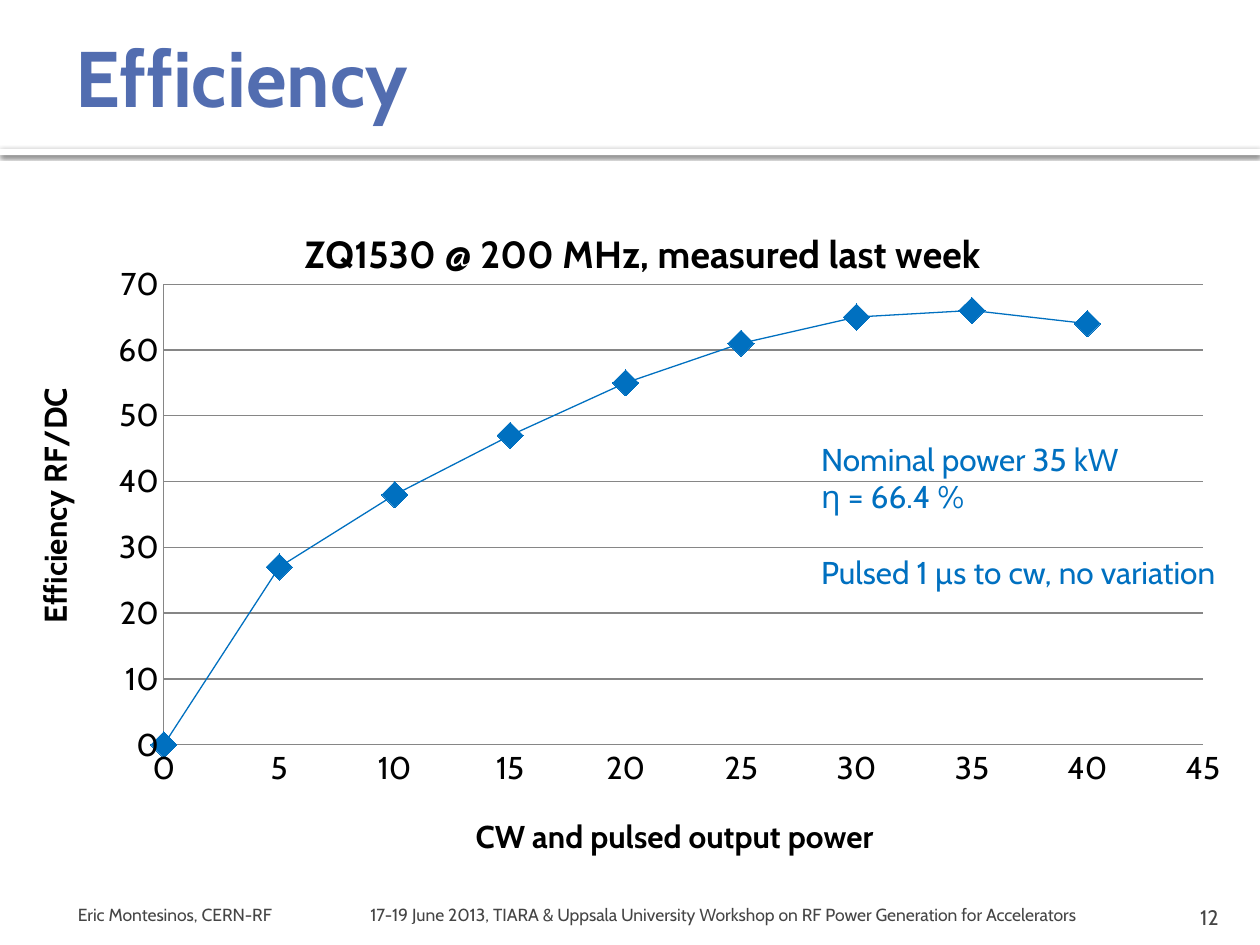
from lxml import etree
from pptx import Presentation
from pptx.chart.data import XyChartData
from pptx.dml.color import RGBColor
from pptx.enum.chart import XL_CHART_TYPE, XL_MARKER_STYLE, XL_TICK_MARK
from pptx.enum.shapes import MSO_SHAPE
from pptx.enum.text import MSO_ANCHOR, MSO_AUTO_SIZE, PP_ALIGN
from pptx.oxml.ns import qn
from pptx.util import Pt

SCATTER = XL_CHART_TYPE.XY_SCATTER_LINES
DIAMOND = XL_MARKER_STYLE.DIAMOND
NO_TICK = XL_TICK_MARK.NONE
RECTANGLE = MSO_SHAPE.RECTANGLE
MIDDLE, BOTTOM, TOP = MSO_ANCHOR.MIDDLE, MSO_ANCHOR.BOTTOM, MSO_ANCHOR.TOP
LEFT, RIGHT = PP_ALIGN.LEFT, PP_ALIGN.RIGHT
GROW = MSO_AUTO_SIZE.SHAPE_TO_FIT_TEXT

POWERS = range(0, 45, 5)
EFFICIENCIES = (0, 27, 38, 47, 55, 61, 65, 66, 64)


def rgb(value):
    return RGBColor.from_string(value)


def add_xml(parent, tag, **attributes):
    values = {name: str(value) for name, value in attributes.items()}
    return etree.SubElement(parent, qn(tag), values)


class SlideStyle:
    """Holds the style and the current slide, and draws its elements."""

    font = "Cabin"
    heading, footer, ink, accent, rule, paper = (
        "526DB0", "454545", "000000", "0070C0", "868686", "FFFFFF")

    def __init__(self, slide):
        self.slide = slide

    def style_font(self, font, size, color, bold=False):
        font.name, font.size, font.bold = self.font, Pt(size), bold
        font.color.rgb = rgb(color)

    def text(self, box, lines, size, color, bold=False, anchor=TOP, align=LEFT,
             insets=(7.2, 3.6, 7.2, 3.6), wrap=True):
        frame = self.slide.shapes.add_textbox(*map(Pt, box)).text_frame
        frame.word_wrap, frame.vertical_anchor = wrap, anchor
        if not wrap:
            frame.auto_size = GROW
        (frame.margin_left, frame.margin_top,
         frame.margin_right, frame.margin_bottom) = map(Pt, insets)
        for index, (line, gap) in enumerate(lines):
            paragraph = frame.add_paragraph() if index else frame.paragraphs[0]
            paragraph.alignment, paragraph.space_before = align, Pt(gap)
            run = paragraph.add_run()
            run.text = line
            self.style_font(run.font, size, color, bold)

    def band(self, box):
        band = self.slide.shapes.add_shape(RECTANGLE, *map(Pt, box))
        band.fill.solid()
        band.fill.fore_color.rgb = rgb(self.paper)
        band.line.fill.background()
        band.shadow.inherit = False
        effects = band._element.spPr.find(qn("a:effectLst"))
        shadow = add_xml(effects, "a:outerShdw", blurRad=Pt(2.5), dist=Pt(0.8),
                         dir=90 * 60000, algn="tl", rotWithShape=0)
        color = add_xml(shadow, "a:srgbClr", val=self.ink)
        add_xml(color, "a:alpha", val=60000)

    def place(self, element, index, inner=False, **fractions):
        layout = element.find(qn("c:layout"))
        if layout is not None:
            element.remove(layout)
        layout = etree.Element(qn("c:layout"))
        element.insert(index, layout)
        manual = add_xml(layout, "c:manualLayout")
        if inner:
            add_xml(manual, "c:layoutTarget", val="inner")
        for side in "xy":
            add_xml(manual, f"c:{side}Mode", val="edge")
        for name, value in fractions.items():
            add_xml(manual, f"c:{name}", val=value)

    def chart_title(self, title, text, size, x, y):
        run = title.text_frame.paragraphs[0].add_run()
        run.text = text
        self.style_font(run.font, size, self.ink, True)
        self.place(title._element, 1, x=x, y=y)

    def axis(self, axis, title, maximum, step, x, y):
        axis.minimum_scale, axis.maximum_scale, axis.major_unit = 0, maximum, step
        axis.major_tick_mark = axis.minor_tick_mark = NO_TICK
        axis.format.line.color.rgb = rgb(self.rule)
        axis.format.line.width = Pt(0.75)
        self.style_font(axis.tick_labels.font, 18, self.ink)
        self.chart_title(axis.axis_title, title, 18, x, y)

    def efficiency_chart(self, box):
        data = XyChartData()
        points = data.add_series("Series 1")
        for power, efficiency in zip(POWERS, EFFICIENCIES):
            points.add_data_point(power, efficiency)
        chart = self.slide.shapes.add_chart(SCATTER, *map(Pt, box), data).chart
        chart.has_legend = False
        self.style_font(chart.font, 18, self.ink)
        self.chart_title(chart.chart_title, "ZQ1530 @ 200 MHz, measured last week",
                         21.6, 0.23, 0.04)
        chart.chart_title.include_in_layout = True
        self.axis(chart.category_axis, "CW and pulsed output power", 45, 5, 0.37, 0.91)
        self.axis(chart.value_axis, "Efficiency RF/DC", 70, 10, 0.01, 0.28)
        chart.category_axis.has_major_gridlines = False
        gridline = chart.value_axis.major_gridlines.format.line
        gridline.color.rgb = rgb(self.rule)
        gridline.width = Pt(0.75)
        plot = chart.plots[0]
        plot.vary_by_categories = False
        curve = plot.series[0]
        curve.smooth = False
        curve.format.line.color.rgb = rgb(self.accent)
        curve.format.line.width = Pt(0.75)
        curve.marker.style, curve.marker.size = DIAMOND, 15
        curve.marker.format.fill.solid()
        curve.marker.format.fill.fore_color.rgb = rgb(self.accent)
        curve.marker.format.line.color.rgb = rgb(self.accent)
        plot_area = chart._chartSpace.chart.plotArea
        self.place(plot_area, 0, True, x=0.121, y=0.135, w=0.845, h=0.681)


def main():
    deck = Presentation()
    deck.slide_width, deck.slide_height = Pt(720), Pt(540)
    page = SlideStyle(deck.slides.add_slide(deck.slide_layouts[6]))
    page.band((0, 85, 720, 3.6))
    page.text((36, 12.2, 648, 62.6), [("Efficiency", 0)], 45, page.heading,
              bold=True, anchor=MIDDLE)
    page.text((36, 509.8, 167.8, 21.6), [("Eric Montesinos, CERN-RF", 0)], 10,
              page.footer, anchor=MIDDLE, insets=(8.6, 3.6, 3.6, 0))
    page.text((208, 509.8, 433.4, 21.6),
              [("17-19 June 2013, TIARA & Uppsala University Workshop on "
                "RF Power Generation for Accelerators", 0)],
              10, page.footer, anchor=MIDDLE, insets=(3.6, 3.6, 3.6, 0))
    page.text((645.8, 509.8, 57.6, 21.6), [("12", 0)], 12, page.footer,
              anchor=BOTTOM, align=RIGHT, insets=(7.2, 3.6, 7.2, 0))
    page.efficiency_chart((8.6, 110.2, 702.7, 386.6))
    page.text((462.2, 247.7, 247.7, 94.3),
              [("Nominal power 35 kW", 0), ("η = 66.4 %", 0),
               ("Pulsed 1 µs to cw, no variation", 21.6)],
              18, page.accent, wrap=False)
    deck.save("out.pptx")


if __name__ == "__main__":
    main()
